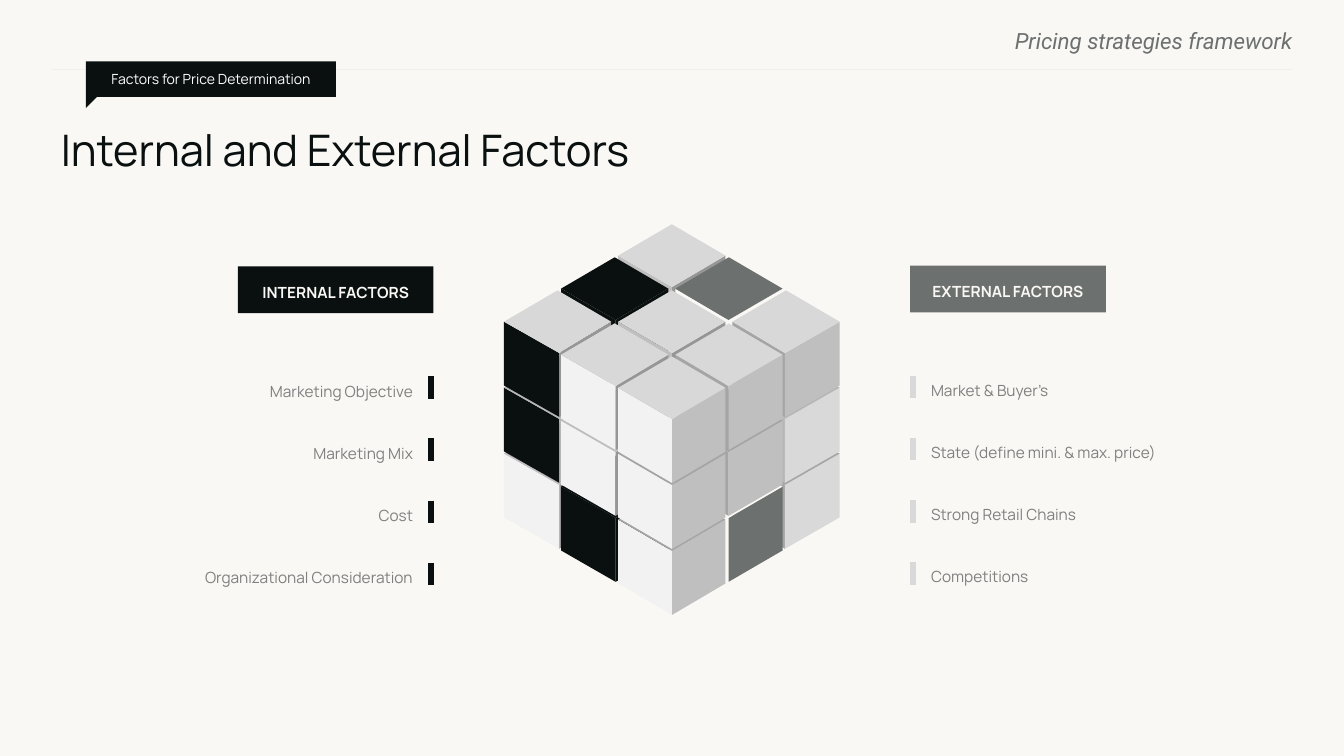
from lxml.etree import SubElement
from pptx import Presentation
from pptx.dml.color import RGBColor
from pptx.enum.shapes import MSO_CONNECTOR, MSO_SHAPE
from pptx.enum.text import MSO_ANCHOR, PP_ALIGN
from pptx.oxml.ns import qn
from pptx.util import Pt

PAPER = RGBColor(0xF9, 0xF8, 0xF5)
INK = RGBColor(0x09, 0x10, 0x0F)
SLATE = RGBColor(0x6C, 0x70, 0x6F)
TEXT_GREY = RGBColor(0x7F, 0x7F, 0x7F)
RULE = RGBColor(0xEF, 0xEF, 0xEF)
WHITE = RGBColor(0xFF, 0xFF, 0xFF)
PALE = RGBColor(0xF2, 0xF2, 0xF2)
LIGHT = RGBColor(0xD9, 0xD9, 0xD9)
TOP_GREY = RGBColor(0xD8, 0xD8, 0xD8)
SIDE_GREY = RGBColor(0xBF, 0xBF, 0xBF)
WARM_GREY = RGBColor(0xBF, 0xBD, 0xBE)
MIST = RGBColor(0xB5, 0xB7, 0xB7)
SEAM = RGBColor(0xA5, 0xA5, 0xA5)
DARK_SEAM = RGBColor(0x96, 0x96, 0x96)

# Each cube: a (steps to the left), b (steps to the right), layer from the top,
# then the colours of its left, right and top faces. Back to front.
CUBES = [
    (0, 0, 0, SIDE_GREY, DARK_SEAM, TOP_GREY),
    (0, 1, 0, PAPER, PAPER, SLATE),
    (1, 0, 0, INK, INK, INK),
    (1, 1, 0, SIDE_GREY, DARK_SEAM, TOP_GREY),
    (0, 2, 2, SEAM, LIGHT, SEAM),
    (1, 2, 2, PAPER, SLATE, PAPER),
    (2, 0, 2, PALE, DARK_SEAM, WARM_GREY),
    (2, 1, 2, INK, INK, INK),
    (2, 2, 2, PALE, SIDE_GREY, SEAM),
    (0, 2, 1, MIST, LIGHT, MIST),
    (1, 2, 1, SEAM, SIDE_GREY, SEAM),
    (2, 0, 1, INK, MIST, MIST),
    (2, 1, 1, PALE, DARK_SEAM, WARM_GREY),
    (2, 2, 1, PALE, SIDE_GREY, SEAM),
    (0, 2, 0, SEAM, SIDE_GREY, TOP_GREY),
    (1, 2, 0, SEAM, SIDE_GREY, TOP_GREY),
    (2, 0, 0, INK, DARK_SEAM, TOP_GREY),
    (2, 1, 0, PALE, DARK_SEAM, TOP_GREY),
    (2, 2, 0, PALE, SIDE_GREY, TOP_GREY),
]
INTERNAL = ["Marketing Objective", "Marketing Mix", "Cost",
            "Organizational Consideration"]
EXTERNAL = ["Market & Buyer’s", "State (define mini. & max. price)",
            "Strong Retail Chains", "Competitions"]
ITEM_STEP = 44.4


def write(sp, text, size=11, color=TEXT_GREY, font="Manrope", bold=False,
          italic=False, align=PP_ALIGN.LEFT, anchor=MSO_ANCHOR.TOP, spacing=None):
    tf = sp.text_frame
    tf.word_wrap = True
    tf.margin_left = tf.margin_right = tf.margin_top = tf.margin_bottom = 0
    tf.vertical_anchor = anchor
    p = tf.paragraphs[0]
    p.alignment = align
    if spacing:
        p.line_spacing = spacing
    r = p.add_run()
    r.text = text
    r.font.size = Pt(size)
    r.font.name = font
    r.font.bold = bold
    r.font.italic = italic
    r.font.color.rgb = color


def paint(sp, color):
    sp.shadow.inherit = False
    sp.fill.solid()
    sp.fill.fore_color.rgb = color
    sp.line.fill.background()


def add_text(s, x, y, w, h, text, **fmt):
    write(s.shapes.add_textbox(Pt(x), Pt(y), Pt(w), Pt(h)), text, **fmt)


def add_block(s, kind, x, y, w, h, color):
    sp = s.shapes.add_shape(kind, Pt(x), Pt(y), Pt(w), Pt(h))
    paint(sp, color)
    return sp


def add_line(s, x1, y1, x2, y2, color, width):
    ln = s.shapes.add_connector(MSO_CONNECTOR.STRAIGHT,
                                Pt(x1), Pt(y1), Pt(x2), Pt(y2))
    ln.line.color.rgb = color
    ln.line.width = Pt(width)
    SubElement(ln._element.spPr, qn("a:effectLst"))


def add_face(s, points, color):
    start, *rest = [(Pt(x), Pt(y)) for x, y in points]
    builder = s.shapes.build_freeform(*start)
    builder.add_line_segments(rest, close=True)
    paint(builder.convert_to_shape(), color)


def add_cube(s, a, b, layer, left_color, right_color, top_color):
    """Draw the three visible faces around the corner nearest the viewer."""
    column = 2 + b - a
    left = 360 + 40.8 * column
    right = left + 76.6
    apex = left + 38.3
    x = 399.5 + 40.3 * column
    y = 205 + 23.6 * (a + b) + 47.1 * layer
    shoulder, height = y - 22.4, 45.6
    for side, color in ((left, left_color), (right, right_color)):
        add_face(s, [(x, y + height), (side, shoulder + height),
                     (side, shoulder), (x, y)], color)
    add_face(s, [(left, shoulder), (apex, y - 44.8), (right, shoulder), (x, y)],
             top_color)


def add_factors(s, heading, items, head_x, head_color, tick_x, tick_color,
                text_x, text_w, align, top):
    for i, item in enumerate(items):
        y = top + i * ITEM_STEP
        add_line(s, tick_x, y - 1.2, tick_x, y + 15, tick_color, 4)
        add_text(s, text_x, y, text_w, 15, item, align=align, spacing=1.2)
    head = add_block(s, MSO_SHAPE.RECTANGLE, head_x, top - 79.7, 139.7, 33.4,
                     head_color)
    write(head, heading, color=PAPER, bold=True, align=PP_ALIGN.CENTER,
          anchor=MSO_ANCHOR.MIDDLE, spacing=1.25)


def main():
    prs = Presentation()
    prs.slide_width, prs.slide_height = Pt(960), Pt(540)
    s = prs.slides.add_slide(prs.slide_layouts[6])
    s.background.fill.solid()
    s.background.fill.fore_color.rgb = PAPER

    add_text(s, 553, 19.5, 370, 17.3, "Pricing strategies framework", size=16,
             color=SLATE, font="Roboto", italic=True, align=PP_ALIGN.RIGHT)
    add_line(s, 923, 49.6, 37.5, 49.6, RULE, 0.75)
    tag = add_block(s, MSO_SHAPE.RECTANGLE, 61.3, 43.9, 178.6, 25.4, INK)
    write(tag, "Factors for Price Determination", size=10, color=WHITE,
          align=PP_ALIGN.CENTER, anchor=MSO_ANCHOR.MIDDLE)
    fold = add_block(s, MSO_SHAPE.RIGHT_TRIANGLE, 61.3, 69.2, 8, 8, INK)
    fold.rotation = 90

    for cube in CUBES:
        add_cube(s, *cube)

    add_factors(s, "INTERNAL FACTORS", INTERNAL, 170, INK, 308, INK,
                111, 184, PP_ALIGN.RIGHT, 270)
    add_factors(s, "EXTERNAL FACTORS", EXTERNAL, 650.2, SLATE, 652.2, LIGHT,
                665, 184, PP_ALIGN.LEFT, 269.5)
    add_text(s, 43.5, 87.8, 878, 49, "Internal and External Factors", size=31,
             color=INK)
    prs.save("out.pptx")


if __name__ == "__main__":
    main()
